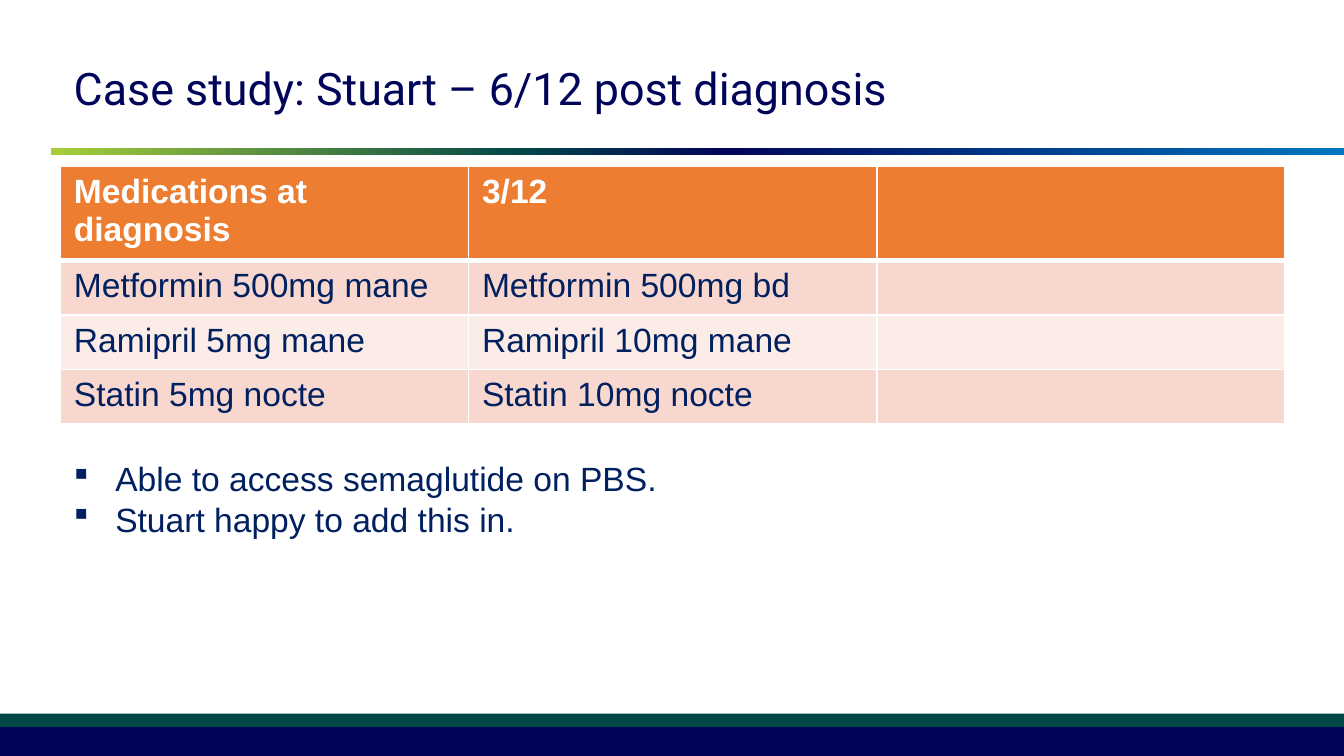
import pptx
import pptx.dml.color
import pptx.enum.shapes
import pptx.enum.text
import pptx.oxml.ns
import pptx.util
from lxml import etree

Inches = pptx.util.Inches
Pt = pptx.util.Pt
RGBColor = pptx.dml.color.RGBColor
qn = pptx.oxml.ns.qn

NAVY = RGBColor(0x00, 0x05, 0x59)
TEAL = RGBColor(0x03, 0x47, 0x48)
LIME = RGBColor(0xA6, 0xCE, 0x39)
BLUE = RGBColor(0x00, 0x76, 0xC0)
TEXT_BLUE = RGBColor(0x00, 0x20, 0x60)
WHITE = RGBColor(0xFF, 0xFF, 0xFF)
ORANGE = RGBColor(0xED, 0x7D, 0x31)
DARK_BAND = RGBColor(0xF8, 0xD7, 0xCE)
LIGHT_BAND = RGBColor(0xFC, 0xEC, 0xE8)

presentation = pptx.Presentation()
presentation.slide_width = Inches(10)
presentation.slide_height = presentation.slide_width * 9 // 16
slide = presentation.slides.add_slide(presentation.slide_layouts[6])


def add_bar(left, top, width, height, color):
    bar = slide.shapes.add_shape(
        pptx.enum.shapes.MSO_SHAPE.RECTANGLE,
        Inches(left), Inches(top), Inches(width), Inches(height))
    bar.shadow.inherit = False
    bar.line.fill.background()
    bar.fill.solid()
    bar.fill.fore_color.rgb = color
    return bar


def set_font(paragraph, name, size, color, bold=False):
    paragraph.font.name = name
    paragraph.font.size = Pt(size)
    paragraph.font.color.rgb = color
    paragraph.font.bold = bold


# Footer bars and the gradient rule under the title
add_bar(0, 5.31, 10, 0.1, TEAL)
add_bar(0, 5.41, 10, 0.25, NAVY)
title_rule = add_bar(0.38, 1.1, 9.62, 0.05, NAVY)
title_rule.fill.gradient()
title_rule.fill.gradient_angle = 0
stop_list = title_rule.fill.gradient_stops[0]._gs.getparent()
for stop in list(stop_list):
    stop_list.remove(stop)
for percent, color in [(0, LIME), (36, TEAL), (52, NAVY), (100, BLUE)]:
    stop = etree.SubElement(stop_list, qn("a:gs"), pos=str(percent * 1000))
    etree.SubElement(stop, qn("a:srgbClr"), val=str(color))

# Title
title_box = slide.shapes.add_textbox(Inches(0.45), Inches(0.3), Inches(9.51), Inches(0.7))
title_frame = title_box.text_frame
title_frame.word_wrap = True
title_frame.vertical_anchor = pptx.enum.text.MSO_ANCHOR.MIDDLE
title_frame.text = "Case study: Stuart – 6/12 post diagnosis"
set_font(title_frame.paragraphs[0], "Roboto", 24, NAVY)

# Medication table
medications = [
    ("Medications at diagnosis", "3/12", ""),
    ("Metformin 500mg mane", "Metformin 500mg bd", ""),
    ("Ramipril 5mg mane", "Ramipril 10mg mane", ""),
    ("Statin 5mg nocte", "Statin 10mg nocte", ""),
]
row_fills = [ORANGE, DARK_BAND, LIGHT_BAND, DARK_BAND]
table = slide.shapes.add_table(
    len(medications), 3, Inches(0.45), Inches(1.24), Inches(9.11), Inches(1.62)).table
for row_index, (entries, row_fill) in enumerate(zip(medications, row_fills)):
    is_header = row_index == 0
    for column_index, entry in enumerate(entries):
        cell = table.cell(row_index, column_index)
        if entry:
            cell.text = entry
        set_font(cell.text_frame.paragraphs[0], "Arial", 18,
                 WHITE if is_header else TEXT_BLUE, is_header)
        cell_properties = cell._tc.get_or_add_tcPr()
        top_width = 3 if row_index == 1 else 1
        bottom_width = 3 if is_header else 1
        for side, width in [("L", 1), ("R", 1), ("T", top_width), ("B", bottom_width)]:
            border = etree.SubElement(cell_properties, qn(f"a:ln{side}"), w=str(Pt(width)))
            border_fill = etree.SubElement(border, qn("a:solidFill"))
            etree.SubElement(border_fill, qn("a:srgbClr"), val=str(WHITE))
        cell.fill.solid()
        cell.fill.fore_color.rgb = row_fill

# Bulleted notes
notes_box = slide.shapes.add_textbox(Inches(0.45), Inches(3.36), Inches(7.47), Inches(1.01))
notes_frame = notes_box.text_frame
notes_frame.word_wrap = True
notes_frame.text = "Able to access semaglutide on PBS.\nStuart happy to add this in."
for paragraph in notes_frame.paragraphs:
    set_font(paragraph, "Arial", 18, TEXT_BLUE)
    properties = paragraph._p.get_or_add_pPr()
    properties.set("marL", str(Inches(0.31)))
    properties.set("indent", str(-Inches(0.31)))
    properties.insert(0, etree.Element(qn("a:buFont"), typeface="Wingdings"))
    properties.insert(1, etree.Element(qn("a:buChar"), char="§"))

presentation.save("out.pptx")
